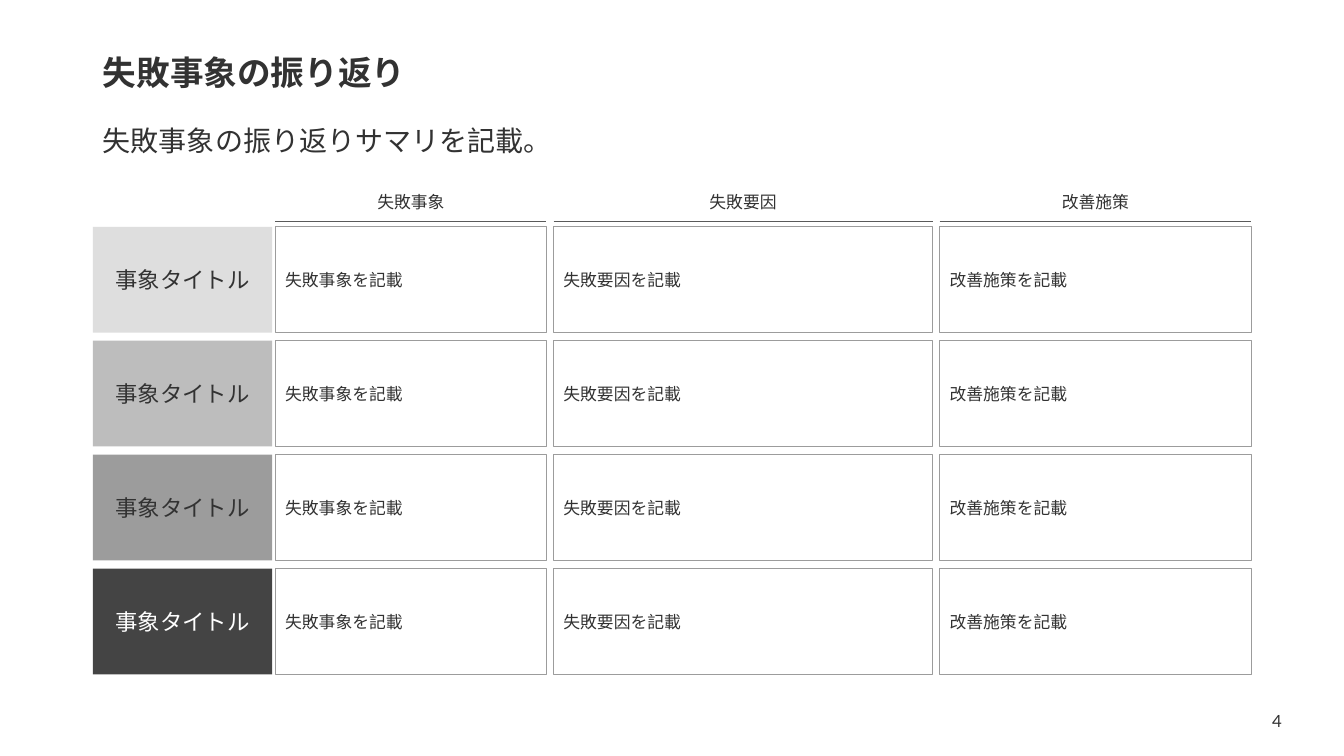
"""Build the slide that reviews failures, their causes and the remedies."""
from lxml.etree import SubElement
from pptx import Presentation
from pptx.dml.color import RGBColor
from pptx.enum.shapes import MSO_CONNECTOR, MSO_SHAPE
from pptx.enum.text import MSO_ANCHOR, MSO_AUTO_SIZE, PP_ALIGN
from pptx.oxml.ns import qn
from pptx.util import Pt

TITLE = "失敗事象の振り返り"
LEAD = "失敗事象の振り返りサマリを記載。"
LABEL = "事象タイトル"
PAGE = "4"
INK, RULE, EDGE = "323232", "5A5A5A", "9C9C9C"
ROWS = [("DEDEDE", INK), ("BDBDBD", INK), ("9C9C9C", INK), ("444444", "FFFFFF")]
COLS = [("失敗事象", 269), ("失敗要因", 376), ("改善施策", 309)]
LEFT, WIDE = 92, 1150
SIDE, GRID, GAP = 178, 273, 7
TOP, TALL, STEP = 225, 105, 113
HEAD, HIGH, LINE = 185, 30, 220
SCALE = 9144


def px(*nums):
    return [num * SCALE for num in nums]


def tint(code):
    return RGBColor.from_string(code)


def write(shape, text, size=12, color=INK, bold=False, align=PP_ALIGN.LEFT,
          space=None, before=None):
    frame = shape.text_frame
    frame.word_wrap = True
    frame.auto_size = MSO_AUTO_SIZE.NONE
    frame.vertical_anchor = MSO_ANCHOR.MIDDLE
    para = frame.paragraphs[0]
    para.alignment = align
    para.line_spacing = space
    para.space_before = before
    run = para.add_run()
    run.text = text
    font = run.font
    font.name, font.size, font.bold = "Lato", Pt(size), bold
    font.color.rgb = tint(color)


def place(holder, top, text, **style):
    holder.left, holder.top, holder.width, holder.height = px(LEFT, top, WIDE, 67)
    write(holder, text, space=0.9, **style)


def label(slide, box, text, **style):
    write(slide.shapes.add_textbox(*px(*box)), text, align=PP_ALIGN.CENTER, **style)


def block(slide, box, text, fill=None, **style):
    shape = slide.shapes.add_shape(MSO_SHAPE.RECTANGLE, *px(*box))
    shape.shadow.inherit = False
    if fill:
        shape.fill.solid()
        shape.fill.fore_color.rgb = tint(fill)
        shape.line.fill.background()
    else:
        shape.fill.background()
        shape.line.color.rgb = tint(EDGE)
        shape.line.width = Pt(0.5)
    write(shape, text, **style)


def rule(slide, left, width):
    line = slide.shapes.add_connector(
        MSO_CONNECTOR.STRAIGHT, *px(left, LINE, left + width, LINE))
    line.line.color.rgb = tint(RULE)
    line.line.width = Pt(0.5)
    SubElement(line._element.spPr, qn("a:effectLst"))


def main():
    deck = Presentation()
    deck.slide_width, deck.slide_height = px(1333, 750)
    slide = deck.slides.add_slide(deck.slide_layouts[2])
    title, lead = slide.placeholders
    place(title, 40, TITLE, size=24, bold=True)
    place(lead, 108, LEAD, size=20, before=Pt(10))
    label(slide, (1242, 695, 49, 40), PAGE)

    tops = [TOP + STEP * row for row in range(len(ROWS))]
    for top, (fill, color) in zip(tops, ROWS):
        block(slide, (LEFT, top, SIDE, TALL), LABEL, fill=fill, size=16,
              color=color, align=PP_ALIGN.CENTER)

    left = GRID
    for name, width in COLS:
        label(slide, (left, HEAD, width, HIGH), name)
        rule(slide, left, width)
        for top in tops:
            block(slide, (left, top, width, TALL), f"{name}を記載")
        left += width + GAP

    deck.save("out.pptx")


if __name__ == "__main__":
    main()
